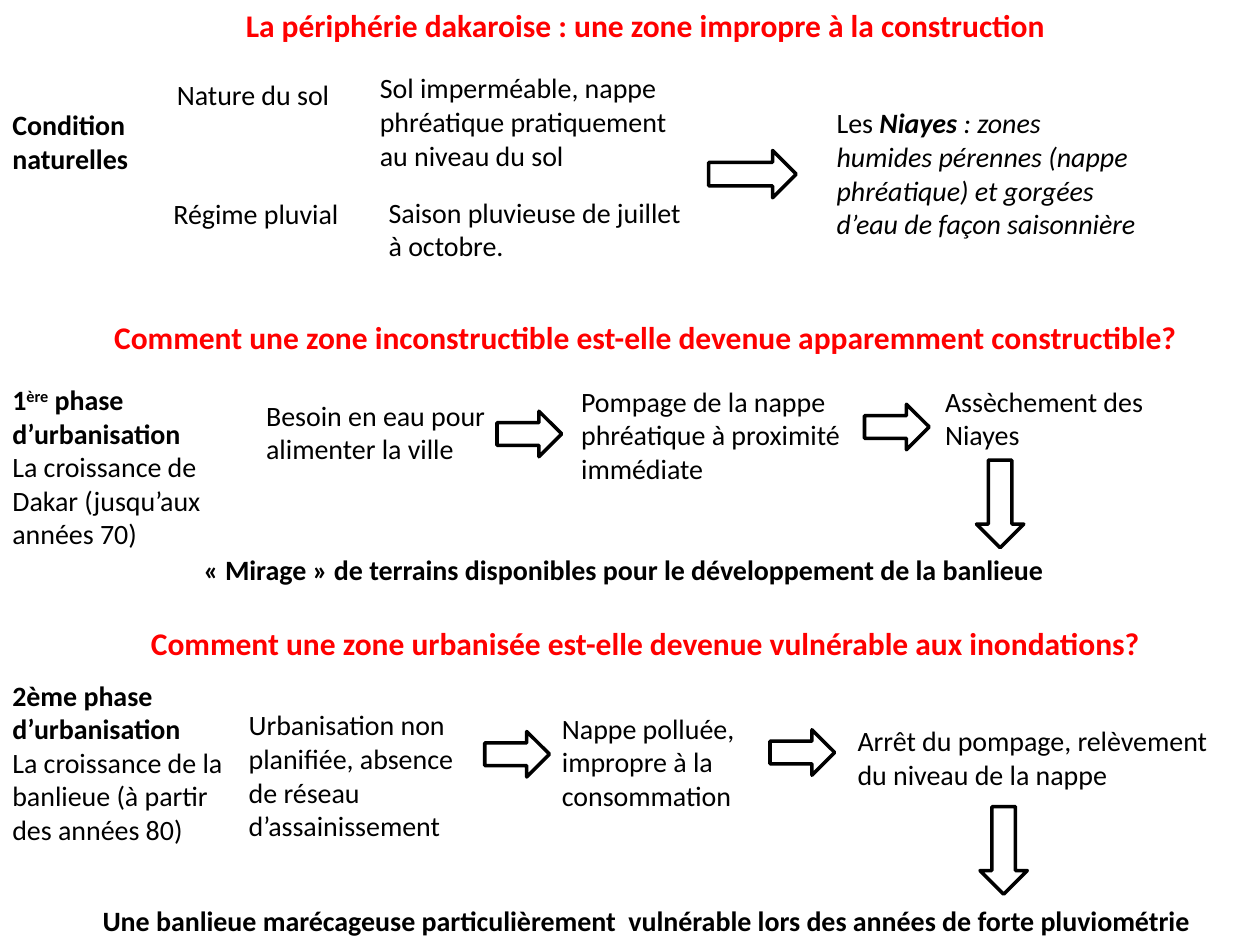
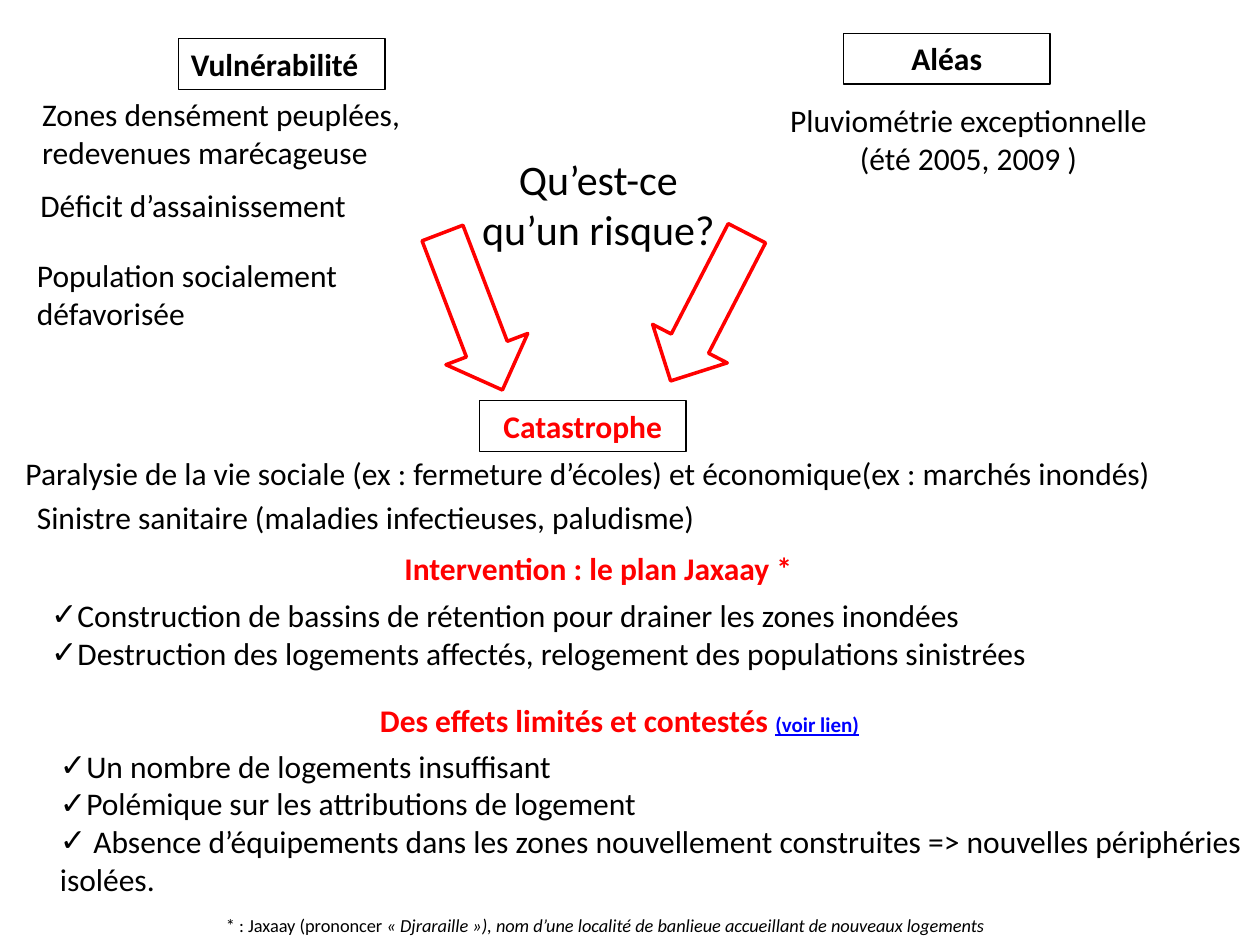
from dataclasses import dataclass

import pptx
import pptx.dml.color
import pptx.enum.shapes
import pptx.enum.text
import pptx.oxml.xmlchemy
import pptx.util
from lxml import etree

Pt = pptx.util.Pt
Align = pptx.enum.text.PP_ALIGN
Shape = pptx.enum.shapes.MSO_SHAPE
Color = pptx.dml.color.RGBColor


@dataclass(frozen=True)
class Theme:
    font: str = "Calibri"
    black: Color = Color(0, 0, 0)
    red: Color = Color(255, 0, 0)
    blue: Color = Color(0, 0, 255)
    question: float = 24
    large: float = 18
    body: float = 16
    link: float = 12
    note: float = 10.5
    arrow_line: float = 2
    frame_line: float = 0.75


THEME = Theme()


@dataclass(frozen=True)
class Span:
    text: str
    bold: bool | None = None
    italic: bool | None = None
    underline: bool | None = None
    size: float | None = None
    color: Color | None = None
    raised: bool = False


def add_span(para, span):
    run = para.add_run()
    run.text = span.text
    run.font.bold = span.bold
    run.font.italic = span.italic
    run.font.underline = span.underline
    if span.size:
        run.font.size = Pt(span.size)
    if span.color:
        run.font.color.rgb = span.color
    if span.raised:
        run.font._element.set("baseline", "30000")


def place(shape, area):
    shape.left, shape.top, shape.width, shape.height = map(Pt, area)


def write(box, paras, size=THEME.body, color=THEME.black, bold=False, align=Align.LEFT):
    frame = box.text_frame
    frame.word_wrap = True
    frame.auto_size = pptx.enum.text.MSO_AUTO_SIZE.NONE
    frame.vertical_anchor = pptx.enum.text.MSO_ANCHOR.TOP
    for index, content in enumerate(paras):
        para = frame.add_paragraph() if index else frame.paragraphs[0]
        para.alignment = align
        para.space_before = Pt(0)
        para.font.name = THEME.font
        para.font.size = Pt(size)
        para.font.bold = bold
        para.font.color.rgb = color
        for span in [Span(content)] if isinstance(content, str) else content:
            add_span(para, span)


def add_text(page, area, *paras, **style):
    box = page.shapes.add_textbox(*map(Pt, area))
    write(box, paras, **style)
    return box


def add_heading(page, area, *paras):
    add_text(page, area, *paras, size=THEME.large, color=THEME.red, bold=True,
             align=Align.CENTER)


def add_framed_label(page, left, top, text, color=THEME.black, align=Align.CENTER):
    box = add_text(page, (left, top, 118, 29), text, size=THEME.large, color=color,
                   bold=True, align=align)
    box.line.color.rgb = THEME.black
    box.line.width = Pt(THEME.frame_line)


def add_arrow(page, kind, area, color=THEME.black, rotation=0):
    arrow = page.shapes.add_shape(kind, *map(Pt, area))
    arrow.shadow.inherit = False
    arrow.fill.background()
    arrow.line.color.rgb = color
    arrow.line.width = Pt(THEME.arrow_line)
    arrow.rotation = rotation


def fill_title(page, area, text, **style):
    place(page.shapes.title, area)
    write(page.shapes.title, [text], align=Align.CENTER, **style)


def fill_checklist(box, area, items):
    place(box, area)
    write(box, items, size=THEME.large)
    for para in box.text_frame.paragraphs:
        properties = para._p.get_or_add_pPr()
        properties.set("marL", "0")
        properties.set("indent", "0")
        bullet = etree.Element(pptx.oxml.ns.qn("a:buChar"), char="✓")
        properties.find(pptx.oxml.ns.qn("a:defRPr")).addprevious(bullet)


def build_periphery(deck):
    page = deck.slides.add_slide(deck.slide_layouts[5])
    fill_title(page, (41, 0, 656, 29),
               "La périphérie dakaroise : une zone impropre à la construction",
               size=THEME.large, color=THEME.red, bold=True)
    for top, question in (
        (178, "Comment une zone inconstructible est-elle devenue apparemment constructible?"),
        (353, "Comment une zone urbanisée est-elle devenue vulnérable aux inondations?"),
    ):
        add_heading(page, (41, top, 656, 29), question)

    add_text(page, (0, 58, 97, 46), "Condition naturelles", bold=True)
    for area, text in (
        ((94, 41, 119, 27), "Nature du sol"),
        ((92, 109, 110, 27), "Régime pluvial"),
        ((210, 37, 191, 66),
         "Sol imperméable, nappe phréatique pratiquement au niveau du sol"),
        ((215, 108, 191, 46), "Saison pluvieuse de juillet à octobre."),
        ((145, 224, 143, 48), "Besoin en eau pour alimenter la ville"),
        ((325, 216, 168, 66), "Pompage de la nappe phréatique à proximité immédiate"),
        ((533, 216, 152, 46), "Assèchement des Niayes"),
        ((135, 401, 143, 85),
         "Urbanisation non planifiée, absence de réseau d’assainissement"),
        ((314, 403, 123, 66), "Nappe polluée, impropre à la consommation"),
        ((483, 410, 216, 46), "Arrêt du pompage, relèvement du niveau de la nappe"),
    ):
        add_text(page, area, text)
    add_text(page, (471, 57, 188, 85), [
        Span("Les "),
        Span("Niayes", bold=True, italic=True),
        Span(" : zones humides pérennes (nappe phréatique) et gorgées d’eau "
             "de façon saisonnière", italic=True),
    ])

    for top, phase, growth in (
        (215, [Span("1"), Span("ère", raised=True), Span(" phase d’urbanisation")],
         "La croissance de Dakar (jusqu’aux années 70)"),
        (384, [Span("2ème phase d’urbanisation")],
         "La croissance de la banlieue (à partir des années 80)"),
    ):
        add_text(page, (0, top, 136, 104), phase, [Span(growth, bold=False)], bold=True)

    add_arrow(page, Shape.RIGHT_ARROW, (405, 86, 50, 27))
    for left, top in ((284, 235), (494, 231), (277, 418), (440, 417)):
        add_arrow(page, Shape.RIGHT_ARROW, (left, top, 37, 26))
    for left, top in ((558, 263), (560, 461)):
        add_arrow(page, Shape.DOWN_ARROW, (left, top, 27, 50))

    for left, top, result in (
        (37, 312, "« Mirage » de terrains disponibles pour le développement de la banlieue"),
        (50, 513, "Une banlieue marécageuse particulièrement  vulnérable lors des années "
                  "de forte pluviométrie"),
    ):
        add_text(page, (left, top, 639, 27), result, bold=True, align=Align.CENTER)


def build_risk(deck):
    page = deck.slides.add_slide(deck.slide_layouts[3])
    fill_title(page, (264, 84, 156, 66), "Qu’est-ce qu’un risque?", size=THEME.question)
    add_framed_label(page, 102, 22, "Vulnérabilité", align=Align.LEFT)
    add_framed_label(page, 482, 19, "Aléas")
    add_framed_label(page, 274, 229, "Catastrophe", color=THEME.red)
    add_arrow(page, Shape.DOWN_ARROW, (245, 130, 50, 96), THEME.red, 339.1)
    add_arrow(page, Shape.DOWN_ARROW, (381, 128, 48, 95), THEME.red, 27.3)

    for area, text, align in (
        ((17, 51, 223, 51), "Zones densément peuplées, redevenues marécageuse", Align.LEFT),
        ((16, 103, 223, 29), "Déficit d’assainissement", Align.LEFT),
        ((14, 143, 223, 51), "Population socialement défavorisée", Align.LEFT),
        ((438, 54, 231, 51), "Pluviométrie exceptionnelle (été 2005, 2009 )", Align.CENTER),
        ((0, 256, 672, 29), "Paralysie de la vie sociale (ex : fermeture d’écoles) et "
                            "économique(ex : marchés inondés)", Align.CENTER),
        ((14, 281, 438, 29), "Sinistre sanitaire (maladies infectieuses, paludisme)",
         Align.LEFT),
    ):
        add_text(page, area, text, size=THEME.large, align=align)

    add_heading(page, (222, 310, 244, 29), "Intervention : le plan Jaxaay * ")
    fill_checklist(page.placeholders[1], (22, 337, 657, 73), [
        "Construction de bassins de rétention pour drainer les zones inondées",
        "Destruction des logements affectés, relogement des populations sinistrées",
    ])
    add_heading(page, (189, 397, 330, 29), [
        Span("Des effets limités et contestés "),
        Span("(voir lien)", underline=True, size=THEME.link, color=THEME.blue),
    ])
    fill_checklist(page.placeholders[2], (27, 423, 693, 117), [
        "Un nombre de logements insuffisant",
        "Polémique sur les attributions de logement",
        " Absence d’équipements dans les zones nouvellement construites => "
        "nouvelles périphéries isolées.",
    ])
    add_text(page, (122, 519, 464, 21), [
        Span("* : Jaxaay (prononcer "),
        Span("« Djraraille »), nom d’une localité de banlieue accueillant de "
             "nouveaux logements", italic=True),
    ], size=THEME.note)


def main():
    deck = pptx.Presentation()
    deck.slide_width, deck.slide_height = Pt(720), Pt(540)
    build_periphery(deck)
    build_risk(deck)
    deck.save("out.pptx")


if __name__ == "__main__":
    main()
